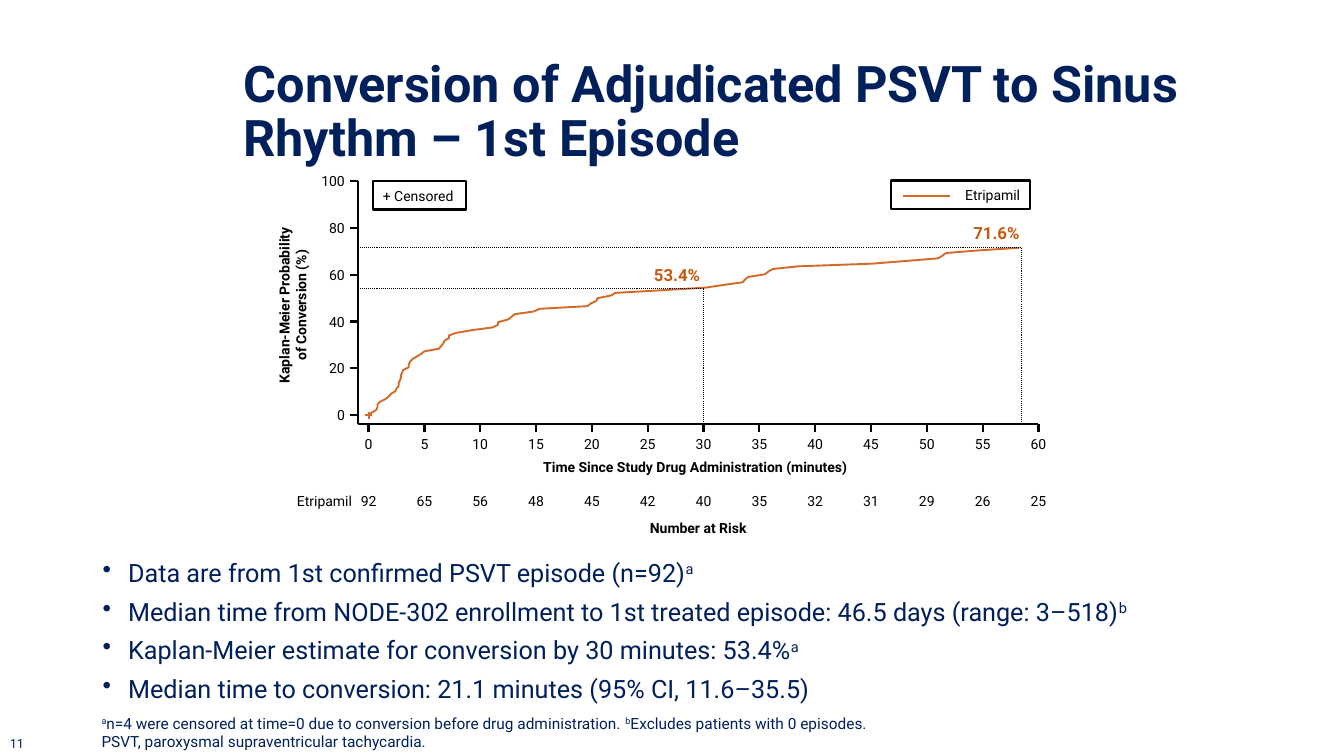
from pptx import Presentation
from pptx.dml.color import RGBColor
from pptx.enum.dml import MSO_LINE
from pptx.enum.shapes import MSO_CONNECTOR, MSO_SHAPE
from pptx.enum.text import MSO_ANCHOR as Anchor, PP_ALIGN as Align
from pptx.oxml.ns import qn
from pptx.util import Cm, Pt

NAVY = RGBColor(0x00, 0x20, 0x5C)
BLACK = RGBColor(0x00, 0x00, 0x00)
AXIS_BLACK = RGBColor(0x01, 0x01, 0x01)
ORANGE = RGBColor(0xD3, 0x6A, 0x28)
DARK_ORANGE = RGBColor(0xC5, 0x5A, 0x10)
WHITE = RGBColor(0xFF, 0xFF, 0xFF)

# Plot geometry in centimetres
AXIS_LEFT, AXIS_BOTTOM, TICK = 9.02, 10.69, 0.2
ZERO_X, PLOT_WIDTH, MAX_MINUTES = 9.29, 16.88, 60
ZERO_Y, PLOT_HEIGHT, MAX_PERCENT = 10.46, 5.89, 100
LABEL_WIDTH, LABEL_HEIGHT = 1.8, 1.07

FINAL_PERCENT = 71.6
# Each time marks one more equal rise of the curve up to FINAL_PERCENT
CONVERSION_MINUTES = [
    0, 0.3, 0.7, 0.8, 0.8, 1.0, 1.5, 1.8, 2.0, 2.4, 2.5, 2.7, 2.7, 2.8, 2.9, 2.9,
    3.0, 3.1, 3.6, 3.6, 3.7, 3.9, 4.3, 4.7, 5.0, 6.3, 6.5, 6.7, 6.8, 7.2, 7.2, 7.9,
    9.3, 11.1, 11.6, 11.6, 12.5, 12.8, 13.1, 14.8, 15.3, 19.6, 19.9, 20.4, 20.5, 21.7,
    22.1, 26.3, 30.2, 31.8, 33.5, 33.7, 34.0, 35.5, 35.8, 36.2, 38.5, 45.1, 48.1, 51.0,
    51.4, 51.7, 54.7, 58.3,
]
AT_RISK = [92, 65, 56, 48, 45, 42, 40, 35, 32, 31, 29, 26, 25]

FINDINGS = [
    "Data are from 1st confirmed PSVT episode (n=92)^a",
    "Median time from NODE-302 enrollment to 1st treated episode: 46.5 days (range: 3–518)^b",
    "Kaplan-Meier estimate for conversion by 30 minutes: 53.4%^a",
    "Median time to conversion: 21.1 minutes (95% CI, 11.6–35.5)",
]
FOOTNOTES = [
    "^a^n=4 were censored at time=0 due to conversion before drug administration. "
    "^b^Excludes patients with 0 episodes.",
    "PSVT, paroxysmal supraventricular tachycardia.",
]


def minute_x(minutes):
    return ZERO_X + PLOT_WIDTH * minutes / MAX_MINUTES


def percent_y(percent):
    return ZERO_Y - PLOT_HEIGHT * percent / MAX_PERCENT


class SlidePainter:
    font = "Roboto"

    def __init__(self, page):
        self.page = page

    def style(self, paragraph, size, color, bold):
        for span in paragraph.runs:
            span.font.name = self.font
            span.font.size = Pt(size)
            span.font.bold = bold
            span.font.color.rgb = color

    def text(self, content, left, top, width, height, size=10, color=BLACK,
             bold=False, align=Align.LEFT, anchor=Anchor.MIDDLE):
        box = self.page.shapes.add_textbox(Cm(left), Cm(top), Cm(width), Cm(height))
        self.fill_text(box, content, size, color, bold, align, anchor)
        return box

    def fill_text(self, box, content, size, color, bold, align, anchor):
        frame = box.text_frame
        frame.word_wrap = True
        frame.vertical_anchor = anchor
        paragraph = frame.paragraphs[0]
        paragraph.text = content
        paragraph.alignment = align
        self.style(paragraph, size, color, bold)

    def paragraphs(self, lines, left, top, width, height, size, anchor, bullet=None):
        """Write lines in which every second part between ^ marks is superscript."""
        box = self.page.shapes.add_textbox(Cm(left), Cm(top), Cm(width), Cm(height))
        frame = box.text_frame
        frame.word_wrap = True
        frame.vertical_anchor = anchor
        for number, line in enumerate(lines):
            paragraph = frame.add_paragraph() if number else frame.paragraphs[0]
            if bullet:
                self.add_bullet(paragraph, bullet)
                if number:
                    paragraph.space_before = Pt(6)
            for index, part in enumerate(line.split("^")):
                if part:
                    span = paragraph.add_run()
                    span.text = part
                    if index % 2:
                        span.font._element.set("baseline", "30000")
            self.style(paragraph, size, NAVY, False)

    def add_bullet(self, paragraph, character):
        properties = paragraph._p.get_or_add_pPr()
        indent = Cm(0.64)
        properties.set("marL", str(indent))
        properties.set("indent", str(-indent))
        mark = properties.makeelement(qn("a:buChar"), {"char": character})
        properties.append(mark)

    def line(self, x1, y1, x2, y2, color=AXIS_BLACK, weight=1.6, dash=None):
        connector = self.page.shapes.add_connector(
            MSO_CONNECTOR.STRAIGHT, Cm(x1), Cm(y1), Cm(x2), Cm(y2))
        connector.line.color.rgb = color
        connector.line.width = Pt(weight)
        if dash:
            connector.line.dash_style = dash
        properties = connector._element.spPr
        properties.append(properties.makeelement(qn("a:effectLst"), {}))

    def curve(self, points, color, weight):
        start, *rest = [(Cm(x), Cm(y)) for x, y in points]
        builder = self.page.shapes.build_freeform(*start)
        builder.add_line_segments(rest, close=False)
        shape = builder.convert_to_shape()
        shape.shadow.inherit = False
        shape.fill.background()
        shape.line.color.rgb = color
        shape.line.width = Pt(weight)

    def legend(self, content, left, top, width, height, align):
        shape = self.page.shapes.add_shape(
            MSO_SHAPE.RECTANGLE, Cm(left), Cm(top), Cm(width), Cm(height))
        shape.shadow.inherit = False
        shape.fill.solid()
        shape.fill.fore_color.rgb = WHITE
        shape.line.color.rgb = BLACK
        shape.line.width = Pt(1.5)
        self.fill_text(shape, content, 10, BLACK, False, align, Anchor.MIDDLE)


def draw_axes(painter):
    painter.line(AXIS_LEFT, AXIS_BOTTOM, minute_x(MAX_MINUTES), AXIS_BOTTOM)
    painter.line(AXIS_LEFT, AXIS_BOTTOM, AXIS_LEFT, percent_y(MAX_PERCENT))
    for index, patients in enumerate(AT_RISK):
        minutes = 5 * index
        x = minute_x(minutes)
        painter.line(x, AXIS_BOTTOM, x, AXIS_BOTTOM + TICK)
        for value, top in ((minutes, 10.64), (patients, 12.09)):
            painter.text(str(value), x - LABEL_WIDTH / 2, top, LABEL_WIDTH,
                         LABEL_HEIGHT, align=Align.CENTER)
    for percent in range(0, MAX_PERCENT + 1, 20):
        y = percent_y(percent)
        painter.line(AXIS_LEFT - TICK, y, AXIS_LEFT, y)
        painter.text(str(percent), 7.67, y - LABEL_HEIGHT / 2, 1.27, LABEL_HEIGHT,
                     align=Align.RIGHT)

    heading = {"bold": True, "align": Align.CENTER}
    painter.text("Time Since Study Drug Administration (minutes)",
                 8.89, 11.23, 17.25, LABEL_HEIGHT, **heading)
    painter.text("Number at Risk", 8.92, 12.78, 17.35, LABEL_HEIGHT, **heading)
    percent_title = painter.text("Kaplan-Meier Probability\vof Conversion (%)",
                                 4.27, 7.16, 6.2, LABEL_HEIGHT, **heading)
    percent_title.rotation = 270
    painter.text("Etripamil", 6.88, 12.09, 2.24, LABEL_HEIGHT, align=Align.RIGHT)


def draw_curve(painter):
    rise = FINAL_PERCENT / (len(CONVERSION_MINUTES) - 1)
    points = [(minute_x(minutes), percent_y(step * rise))
              for step, minutes in enumerate(CONVERSION_MINUTES)]
    painter.curve(points, ORANGE, 1.35)
    arm = 0.09
    painter.line(ZERO_X, ZERO_Y - arm, ZERO_X, ZERO_Y + arm, ORANGE, 1.35)
    painter.line(ZERO_X - arm, ZERO_Y, ZERO_X + arm, ZERO_Y, ORANGE, 1.35)

    guides = [(30, 54.3, "53.4%", 16.23, 6.55), (58.5, FINAL_PERCENT, "71.6%", 24.28, 5.49)]
    for minutes, percent, label, left, top in guides:
        x, y = minute_x(minutes), percent_y(percent)
        painter.line(x, AXIS_BOTTOM, x, y, BLACK, 0.75, MSO_LINE.ROUND_DOT)
        painter.line(AXIS_LEFT, y, x, y, BLACK, 0.75, MSO_LINE.ROUND_DOT)
        painter.text(label, left, top, 2.16, 0.76, 12, DARK_ORANGE, True,
                     anchor=Anchor.TOP)

    painter.legend("+ Censored", 9.4, 4.57, 2.34, 0.71, Align.LEFT)
    painter.legend("Etripamil", 22.45, 4.55, 3.51, 0.71, Align.RIGHT)
    painter.line(22.76, 4.95, 23.93, 4.95, ORANGE, 1.5)


def main():
    deck = Presentation()
    deck.slide_width, deck.slide_height = Cm(33.87), Cm(19.05)
    painter = SlidePainter(deck.slides.add_slide(deck.slide_layouts[6]))

    title = painter.text("Conversion of Adjudicated PSVT to Sinus Rhythm – 1st Episode",
                         5.89, 1.02, 25.65, 3.68, 36, NAVY, True)
    title.text_frame.paragraphs[0].line_spacing = 0.9
    draw_axes(painter)
    draw_curve(painter)
    painter.paragraphs(FINDINGS, 2.34, 13.92, 29.21, 3.99, 18, Anchor.TOP, "•")
    painter.paragraphs(FOOTNOTES, 2.31, 17.86, 29.21, 1.19, 11, Anchor.BOTTOM)
    page_number = painter.text("11", 0, 18.42, 0.69, 0.63, 9, NAVY, anchor=Anchor.TOP)
    page_number.text_frame.margin_right = 0
    deck.save("out.pptx")


if __name__ == "__main__":
    main()
